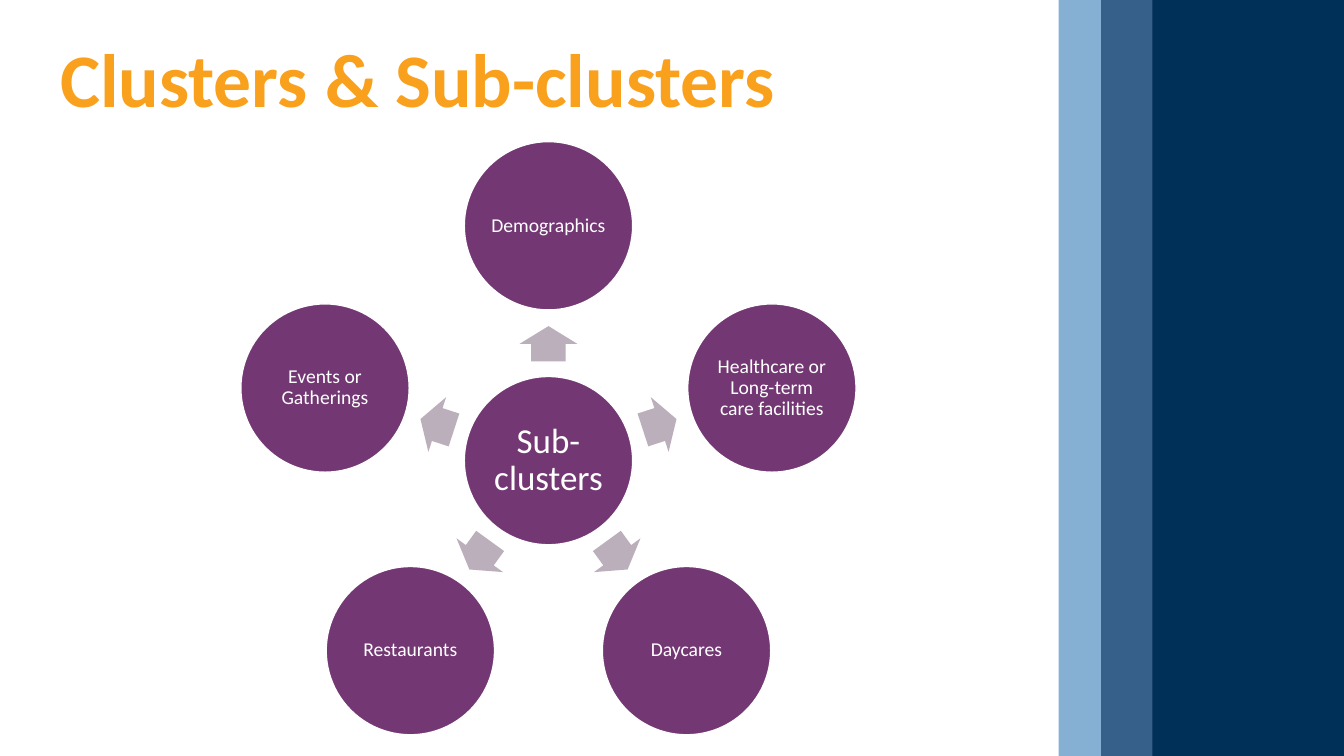
import math

from pptx import Presentation
from pptx import util as u
from pptx.dml.color import RGBColor
from pptx.enum import shapes, text

COLORS = {
    "sky": "86B0D3",
    "steel": "36608A",
    "navy": "003057",
    "purple": "733873",
    "mauve": "BCAFBC",
    "orange": "F9A01D",
    "white": "FFFFFF",
}
PAGE_WIDTH, PAGE_HEIGHT = 13.33, 7.5
HUB_X, HUB_Y = 5.44, 4.57
CIRCLE_SIZE = 1.67
CIRCLE_ORBIT, ARROW_ORBIT = 2.33, 1.16
BANDS = [(10.5, "sky"), (10.92, "steel"), (11.43, "navy")]
SUB_CLUSTERS = [
    "Demographics",
    "Healthcare or Long-term care facilities",
    "Daycares",
    "Restaurants",
    "Events or Gatherings",
]


class SlideBuilder:
    """Holds the text style and the page being drawn."""

    def __init__(self, page, font="Calibri"):
        self.page = page
        self.font = font

    def color(self, name):
        return RGBColor.from_string(COLORS[name])

    def shape(self, kind, left, top, width, height, fill):
        """Add a filled preset shape without outline or shadow."""
        shape = self.page.shapes.add_shape(
            kind, u.Inches(left), u.Inches(top), u.Inches(width), u.Inches(height))
        shape.shadow.inherit = False
        shape.fill.solid()
        shape.fill.fore_color.rgb = self.color(fill)
        shape.line.fill.background()
        return shape

    def add_words(self, box, words, size, color, align, bold=False):
        para = box.text_frame.paragraphs[0]
        para.alignment = align
        para.line_spacing = 0.9
        span = para.add_run()
        span.text = words
        span.font.name = self.font
        span.font.size = u.Pt(size)
        span.font.bold = bold
        span.font.color.rgb = self.color(color)

    def band(self, left, fill):
        self.shape(shapes.MSO_SHAPE.RECTANGLE, left, 0,
                   PAGE_WIDTH - left, PAGE_HEIGHT, fill)

    def circle(self, center_x, center_y, words, size, inset):
        circle = self.shape(
            shapes.MSO_SHAPE.OVAL, center_x - CIRCLE_SIZE / 2,
            center_y - CIRCLE_SIZE / 2, CIRCLE_SIZE, CIRCLE_SIZE, "purple")
        circle.line.color.rgb = self.color("white")
        circle.line.width = u.Pt(1)
        frame = circle.text_frame
        frame.word_wrap = True
        frame.vertical_anchor = text.MSO_ANCHOR.MIDDLE
        frame.margin_left = frame.margin_right = u.Inches(inset)
        frame.margin_top = frame.margin_bottom = u.Inches(inset)
        self.add_words(circle, words, size, "white", text.PP_ALIGN.CENTER)

    def arrow(self, center_x, center_y, angle):
        width, height = 0.35, 0.57
        arrow = self.shape(
            shapes.MSO_SHAPE.RIGHT_ARROW, center_x - width / 2,
            center_y - height / 2, width, height, "mauve")
        arrow.adjustments[0] = 0.6
        arrow.adjustments[1] = 0.5
        arrow.rotation = angle

    def title(self, words):
        box = self.page.shapes.add_textbox(
            u.Inches(0.5), u.Inches(0.37), u.Inches(9.76), u.Inches(0.97))
        box.text_frame.word_wrap = True
        self.add_words(box, words, 54, "orange", text.PP_ALIGN.LEFT, bold=True)


def around_hub(angle, orbit):
    """Return the point at an angle (clockwise from the right) around the hub."""
    turn = math.radians(angle)
    return HUB_X + orbit * math.cos(turn), HUB_Y + orbit * math.sin(turn)


def main():
    deck = Presentation()
    deck.slide_width = u.Inches(PAGE_WIDTH)
    deck.slide_height = u.Inches(PAGE_HEIGHT)
    builder = SlideBuilder(deck.slides.add_slide(deck.slide_layouts[6]))

    for left, fill in BANDS:
        builder.band(left, fill)

    builder.circle(HUB_X, HUB_Y, "Sub-clusters", 25, 0.03)
    for index, name in enumerate(SUB_CLUSTERS):
        angle = (270 + index * 360 / len(SUB_CLUSTERS)) % 360
        builder.arrow(*around_hub(angle, ARROW_ORBIT), angle)
        builder.circle(*around_hub(angle, CIRCLE_ORBIT), name, 14, 0.02)

    builder.title("Clusters & Sub-clusters")
    deck.save("out.pptx")


if __name__ == "__main__":
    main()
